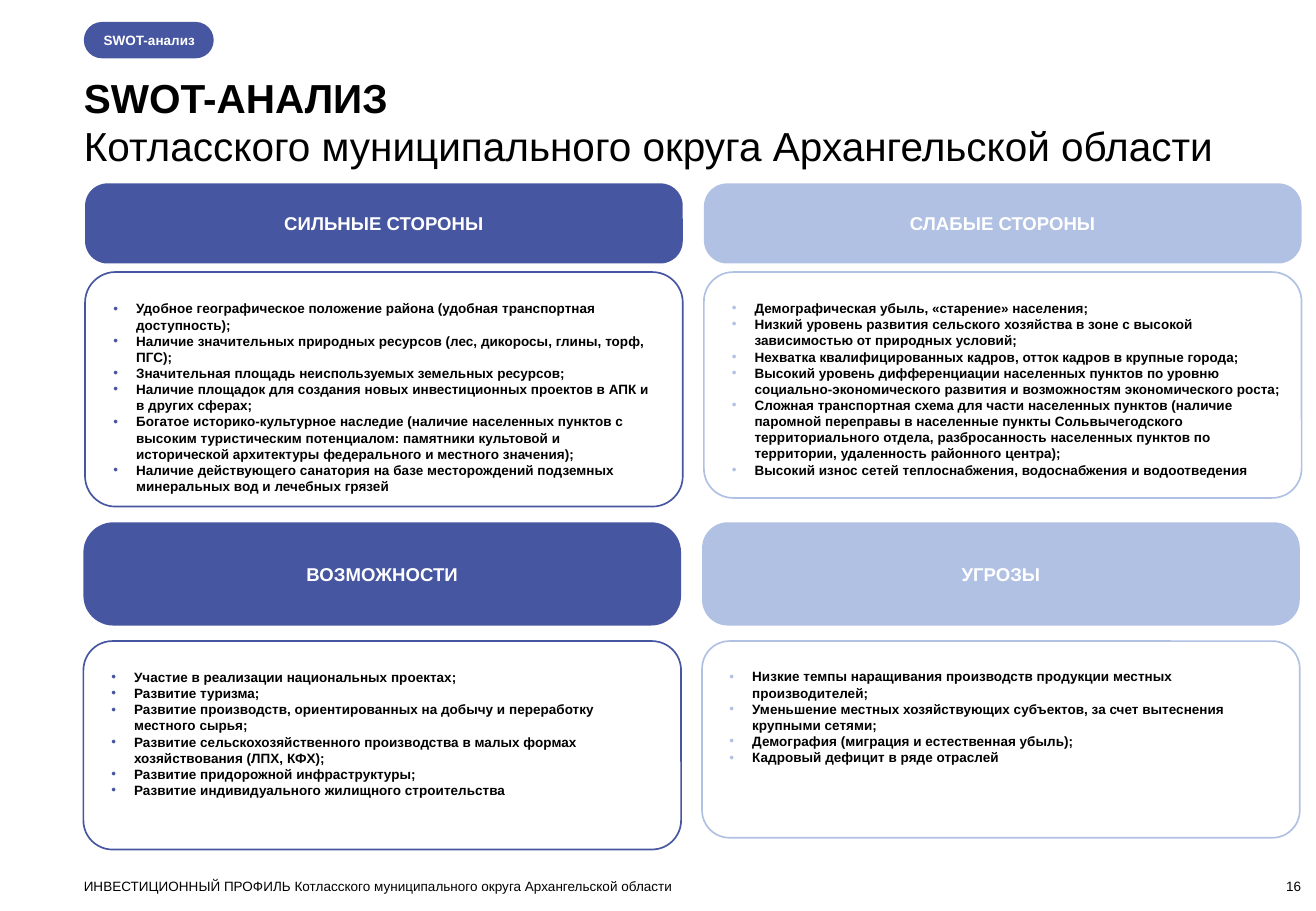
from collections import namedtuple

from lxml import etree
from pptx import Presentation
from pptx.dml.color import RGBColor
from pptx.enum.shapes import MSO_SHAPE
from pptx.enum.text import MSO_ANCHOR, MSO_AUTO_SIZE, PP_ALIGN
from pptx.oxml.ns import qn
from pptx.util import Pt

ROUNDED = MSO_SHAPE.ROUNDED_RECTANGLE
TOP, MIDDLE, BOTTOM = MSO_ANCHOR.TOP, MSO_ANCHOR.MIDDLE, MSO_ANCHOR.BOTTOM
LEFT, CENTER, RIGHT = PP_ALIGN.LEFT, PP_ALIGN.CENTER, PP_ALIGN.RIGHT
NO_FIT = MSO_AUTO_SIZE.NONE

COLORS = {"dark": "4756A0", "light": "B1C1E4", "black": "000000", "white": "FFFFFF"}
CORNER_INSET = 0.29
INDENT = 13.5
MARGIN = 49.7

Box = namedtuple("Box", "left top width height")
Quadrant = namedtuple("Quadrant", "box color head gap head_round list_round right_inset title items")

QUADRANTS = [
    Quadrant(Box(50.4, 108.7, 354.2, 191.6), "dark", 47.5, 5.1, 0.28, 0.13, 11.5, "СИЛЬНЫЕ СТОРОНЫ", [
        "Удобное географическое положение района (удобная транспортная доступность);",
        "Наличие значительных природных ресурсов (лес, дикоросы, глины, торф, ПГС);",
        "Значительная площадь неиспользуемых земельных ресурсов;",
        "Наличие площадок для создания новых инвестиционных проектов в АПК и в других сферах;",
        "Богатое историко-культурное наследие (наличие населенных пунктов с высоким туристическим "
        "потенциалом: памятники культовой и исторической архитектуры федерального и местного значения);",
        "Наличие действующего санатория на базе месторождений подземных минеральных вод и лечебных грязей",
    ]),
    Quadrant(Box(417.1, 108.7, 354.2, 186.5), "light", 47.5, 5.1, 0.29, 0.13, 7.2, "СЛАБЫЕ СТОРОНЫ", [
        "Демографическая убыль, «старение» населения;",
        "Низкий уровень развития сельского хозяйства в зоне с высокой зависимостью от природных условий;",
        "Нехватка квалифицированных кадров, отток кадров в крупные города;",
        "Высокий уровень дифференциации населенных пунктов по уровню социально-экономического развития "
        "и возможностям экономического роста;",
        "Сложная транспортная схема для части населенных пунктов (наличие паромной переправы в населенные "
        "пункты Сольвычегодского территориального отдела, разбросанность населенных пунктов по территории, "
        "удаленность районного центра);",
        "Высокий износ сетей теплоснабжения, водоснабжения и водоотведения",
    ]),
    Quadrant(Box(49.4, 309.6, 354.2, 194), "dark", 61.2, 9.2, 0.29, 0.14, 11.5, "ВОЗМОЖНОСТИ", [
        "Участие в реализации национальных проектах;",
        "Развитие туризма;",
        "Развитие производств, ориентированных на добычу и переработку местного сырья;",
        "Развитие сельскохозяйственного производства в малых формах хозяйствования (ЛПХ, КФХ);",
        "Развитие придорожной инфраструктуры;",
        "Развитие индивидуального жилищного строительства",
    ]),
    Quadrant(Box(416, 309.6, 354.2, 187), "light", 61.2, 9.2, 0.25, 0.14, 7.2, "УГРОЗЫ", [
        "Низкие темпы наращивания производств продукции местных производителей;",
        "Уменьшение местных хозяйствующих субъектов, за счет вытеснения крупными сетями;",
        "Демография (миграция и естественная убыль);",
        "Кадровый дефицит в ряде отраслей",
    ]),
]


def rgb(name):
    """Return the named colour."""
    return RGBColor.from_string(COLORS[name])


def apply(target, values):
    """Set every attribute in values on the target."""
    for name, value in values.items():
        setattr(target, name, value)


def move(shape, box):
    """Place a shape on a box given in points."""
    apply(shape, {name: Pt(value) for name, value in box._asdict().items()})


def add_bullet(para, color):
    """Give a paragraph a hanging coloured bullet."""
    properties = para._p.get_or_add_pPr()
    properties.set("marL", str(Pt(INDENT)))
    properties.set("indent", str(-Pt(INDENT)))
    bullet_color = etree.SubElement(properties, qn("a:buClr"))
    etree.SubElement(bullet_color, qn("a:srgbClr"), val=COLORS[color])
    etree.SubElement(properties, qn("a:buFont"), typeface="Arial")
    etree.SubElement(properties, qn("a:buChar"), char="•")


def write(shape, lines, size, color="black", bold=(False,), align=LEFT, anchor=TOP, insets=(0, 0, 0, 0), bullet=None):
    """Write lines of text into a shape."""
    frame = shape.text_frame
    sides = ("margin_left", "margin_top", "margin_right", "margin_bottom")
    apply(frame, {side: Pt(inset) for side, inset in zip(sides, insets)})
    apply(frame, {"word_wrap": True, "auto_size": NO_FIT, "vertical_anchor": anchor})
    for index, line in enumerate(lines):
        para = frame.add_paragraph() if index else frame.paragraphs[0]
        apply(para, {"alignment": align, "space_before": Pt(0)})
        if bullet:
            add_bullet(para, bullet)
        span = para.add_run()
        span.text = line
        apply(span.font, {"name": "Arial", "size": Pt(size), "bold": bold[index % len(bold)]})
        span.font.color.rgb = rgb(color)


def add_panel(page, box, rounding, fill=None, line=None):
    """Add a rounded panel, filled or outlined."""
    panel = page.shapes.add_shape(ROUNDED, *map(Pt, box))
    panel.adjustments[0] = rounding
    panel.shadow.inherit = False
    if fill:
        panel.fill.solid()
        panel.fill.fore_color.rgb = rgb(fill)
        panel.line.fill.background()
    else:
        panel.fill.background()
        panel.line.color.rgb = rgb(line)
        panel.line.width = Pt(1)
    return panel


def add_quadrant(page, quadrant, body):
    """Add one SWOT heading with its framed list below."""
    box = quadrant.box
    heading = add_panel(page, box._replace(height=quadrant.head), quadrant.head_round, fill=quadrant.color)
    write(heading, [quadrant.title], 11, "white", (True,), CENTER, MIDDLE, (7.2, 3.6, 7.2, 3.6))
    offset = quadrant.head + quadrant.gap
    frame = box._replace(top=box.top + offset, height=box.height - offset)
    add_panel(page, frame, quadrant.list_round, line=quadrant.color)
    corner = CORNER_INSET * quadrant.list_round * frame.height
    insets = (11.5 + corner, 11.5 + corner, quadrant.right_inset + corner, 3.6)
    move(body, frame)
    write(body, quadrant.items, 8, bold=(True,), insets=insets, bullet=quadrant.color)


def add_header(page, box):
    """Add the section tag and the two-line title."""
    tag = add_panel(page, box._replace(width=77, height=21.6), 0.5, fill="dark")
    write(tag, ["SWOT-анализ"], 8, "white", (True,), anchor=MIDDLE, insets=(8.6, 0, 0, 0))
    title = page.shapes.title
    move(title, box._replace(top=box.top + 30.2, height=box.height - 30.2))
    lines = ["SWOT-АНАЛИЗ", "Котласского муниципального округа Архангельской области"]
    write(title, lines, 24, bold=(True, False))


def add_footer(page, box):
    """Add the document name and the page number."""
    name = page.shapes.add_textbox(*map(Pt, box._replace(width=576)))
    write(name, ["ИНВЕСТИЦИОННЫЙ ПРОФИЛЬ Котласского муниципального округа Архангельской области"], 8)
    number_left = box.left + box.width - 57.6
    number = page.shapes.add_textbox(*map(Pt, box._replace(left=number_left, width=57.6)))
    write(number, ["16"], 8, align=RIGHT, anchor=BOTTOM)


def main():
    """Build and save the SWOT slide."""
    deck = Presentation()
    apply(deck, {"slide_width": Pt(779.8), "slide_height": Pt(540)})
    page = deck.slides.add_slide(deck.slide_layouts[4])
    bodies = [shape for shape in page.placeholders if shape.placeholder_format.idx]
    add_header(page, Box(MARGIN, 13, 721.4, 88.5))
    for quadrant, body in zip(QUADRANTS, bodies):
        add_quadrant(page, quadrant, body)
    add_footer(page, Box(MARGIN, 520.6, 721.4, 9.4))
    deck.save("out.pptx")


if __name__ == "__main__":
    main()
